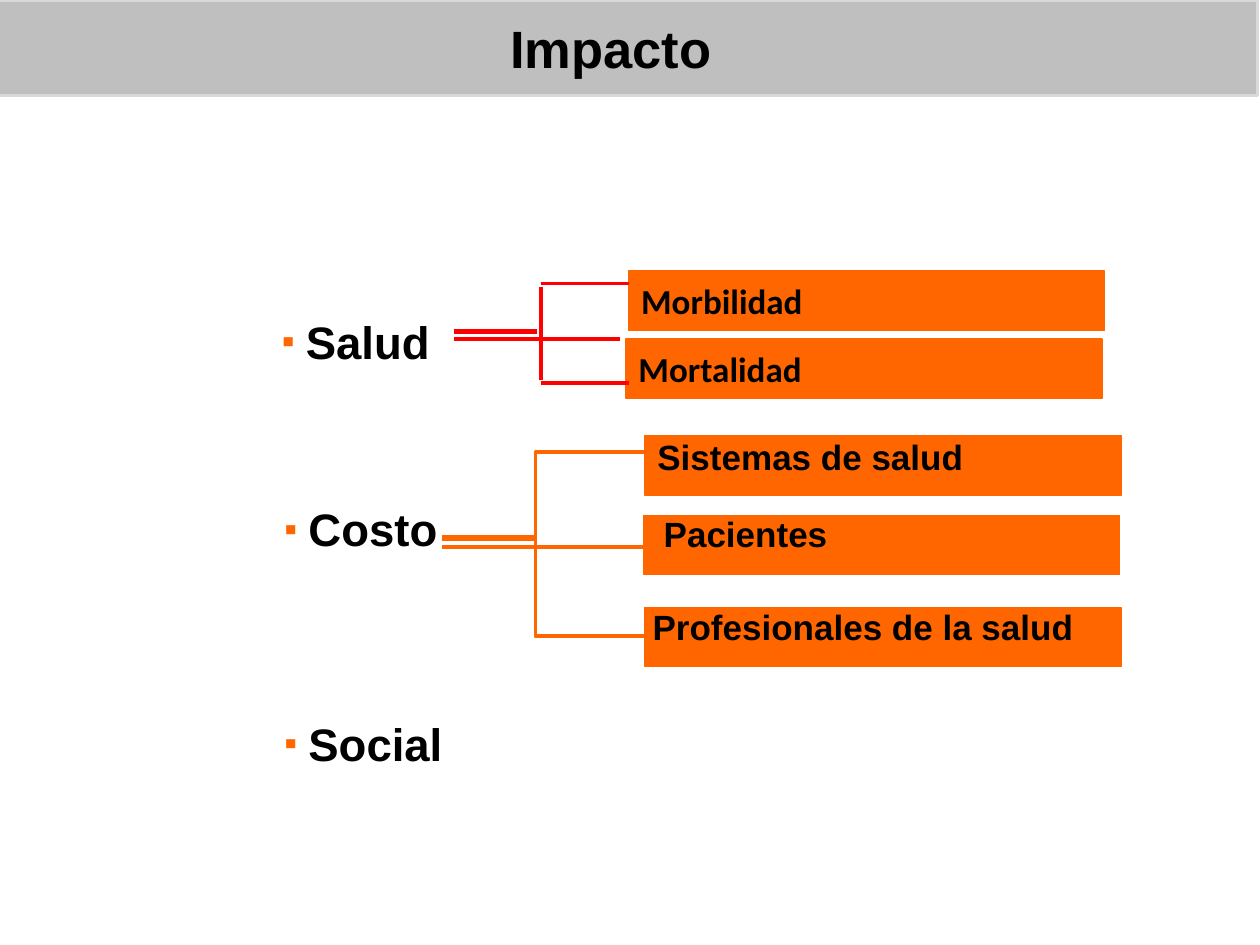
from lxml.etree import SubElement
from pptx import Presentation
from pptx.dml.color import RGBColor
from pptx.enum.shapes import MSO_CONNECTOR, MSO_SHAPE
from pptx.enum.text import MSO_ANCHOR, MSO_AUTO_SIZE, PP_ALIGN
from pptx.oxml.ns import qn
from pptx.util import Pt

ORANGE = RGBColor(0xFF, 0x66, 0x00)
RED = RGBColor(0xFF, 0x00, 0x00)
BLACK = RGBColor(0x00, 0x00, 0x00)
BAND_FILL = RGBColor(0xBF, 0xBF, 0xBF)
BAND_LINE = RGBColor(0xD9, 0xD9, 0xD9)

TITLE = "Impacto"
BAR_SIZE = (272, 34)
TOPIC_SIZE = (136, 38.9)
TOPIC_INDENT = 13.7

# text, left, top
TOPICS = [("Costo", 155.5, 283), ("Salud", 154, 175.7), ("Social", 155.5, 405.4)]
HEALTH_BARS = [("Morbilidad", 359.3, 154.8), ("Mortalidad", 357.8, 193.7)]
# bar left, bar top, text, text left, text top, text width
COST_BARS = [
    (368.6, 249, "Sistemas de salud", 368.6, 245.5, 197.3),
    (367.9, 294.5, "Pacientes", 372.2, 289.4, 112.3),
    (368.6, 347, "Profesionales de la salud", 365.8, 342.7, 265.7),
]
LABEL_HEIGHT = 31.7

# The cost bracket: x of its stem, spine and tips, then (stem y, tip y) of each arm
COST_X = (252.7, 306, 371.5)
COST_ARMS = [(306.7, 258.5), (308.2, 363.6)]
COST_MIDDLE = 312.5

# start x, start y, end x, end y, weight
HEALTH_LINES = [
    (259.2, 193.7, 354.2, 193.7, 2.25),
    (308.9, 164.2, 308.9, 217.4, 2.25),
    (308.9, 162, 359.3, 162, 2.25),
    (308.9, 218.9, 359.3, 218.9, 2.25),
    (259.2, 189.4, 306.7, 189.4, 3),
]


def write(shape, text, size, font="Arial", bullet=False, wrap=True, anchor=MSO_ANCHOR.TOP):
    frame = shape.text_frame
    frame.word_wrap = wrap
    frame.vertical_anchor = anchor
    para = frame.paragraphs[0]
    para.alignment = PP_ALIGN.LEFT
    if bullet:
        add_bullet(para)
    span = para.add_run()
    span.text = text
    span.font.name = font
    span.font.size = Pt(size)
    span.font.bold = True
    span.font.color.rgb = BLACK


def add_bullet(para):
    """Give the paragraph a small orange square and a hanging indent."""
    props = para._p.get_or_add_pPr()
    props.set("marL", str(Pt(TOPIC_INDENT)))
    props.set("indent", str(-Pt(TOPIC_INDENT)))
    color = SubElement(props, qn("a:buClr"))
    SubElement(color, qn("a:srgbClr"), val=str(ORANGE))
    SubElement(props, qn("a:buSzPct"), val="80000")
    SubElement(props, qn("a:buFont"), typeface="Arial")
    SubElement(props, qn("a:buChar"), char="▪")


def add_text(page, text, left, top, width, height, **style):
    box = page.shapes.add_textbox(Pt(left), Pt(top), Pt(width), Pt(height))
    write(box, text, **style)
    box.text_frame.auto_size = MSO_AUTO_SIZE.SHAPE_TO_FIT_TEXT


def add_bar(page, left, top, width, height, fill=ORANGE, line=ORANGE, weight=0.75):
    bar = page.shapes.add_shape(MSO_SHAPE.RECTANGLE, Pt(left), Pt(top), Pt(width), Pt(height))
    bar.shadow.inherit = False
    bar.fill.solid()
    bar.fill.fore_color.rgb = fill
    bar.line.color.rgb = line
    bar.line.width = Pt(weight)
    return bar


def add_line(page, x1, y1, x2, y2, color, weight=2.25):
    line = page.shapes.add_connector(MSO_CONNECTOR.STRAIGHT, Pt(x1), Pt(y1), Pt(x2), Pt(y2))
    line.line.color.rgb = color
    line.line.width = Pt(weight)
    SubElement(line._element.spPr, qn("a:effectLst"))


def add_arm(page, stem_y, tip_y):
    """Draw one stepped arm of the cost bracket."""
    stem, spine, tip = COST_X
    builder = page.shapes.build_freeform(Pt(stem), Pt(stem_y))
    corners = [(spine, stem_y), (spine, tip_y), (tip, tip_y)]
    builder.add_line_segments([(Pt(x), Pt(y)) for x, y in corners], close=False)
    arm = builder.convert_to_shape()
    arm.shadow.inherit = False
    arm.fill.background()
    arm.line.color.rgb = ORANGE
    arm.line.width = Pt(2.25)


def main():
    deck = Presentation()
    deck.slide_width, deck.slide_height = Pt(720), Pt(540)
    page = deck.slides.add_slide(deck.slide_layouts[6])

    add_bar(page, -1.5, 0, 720, 54.7, fill=BAND_FILL, line=BAND_LINE, weight=2)
    add_text(page, TITLE, 284.4, 5.8, 175.7, 43.2, size=30)

    for left, top, *_ in COST_BARS:
        add_bar(page, left, top, *BAR_SIZE)
    for text, left, top in TOPICS:
        add_text(page, text, left, top, *TOPIC_SIZE, size=26, bullet=True)
    for stem_y, tip_y in COST_ARMS:
        add_arm(page, stem_y, tip_y)
    add_line(page, COST_X[0], COST_MIDDLE, COST_X[-1], COST_MIDDLE, ORANGE)
    for _, _, text, left, top, width in COST_BARS:
        add_text(page, text, left, top, width, LABEL_HEIGHT, size=20)

    for text, left, top in HEALTH_BARS:
        bar = add_bar(page, left, top, *BAR_SIZE)
        write(bar, text, size=20, font="Calibri", wrap=False, anchor=MSO_ANCHOR.MIDDLE)
    for *ends, weight in HEALTH_LINES:
        add_line(page, *ends, RED, weight)

    deck.save("out.pptx")


if __name__ == "__main__":
    main()
